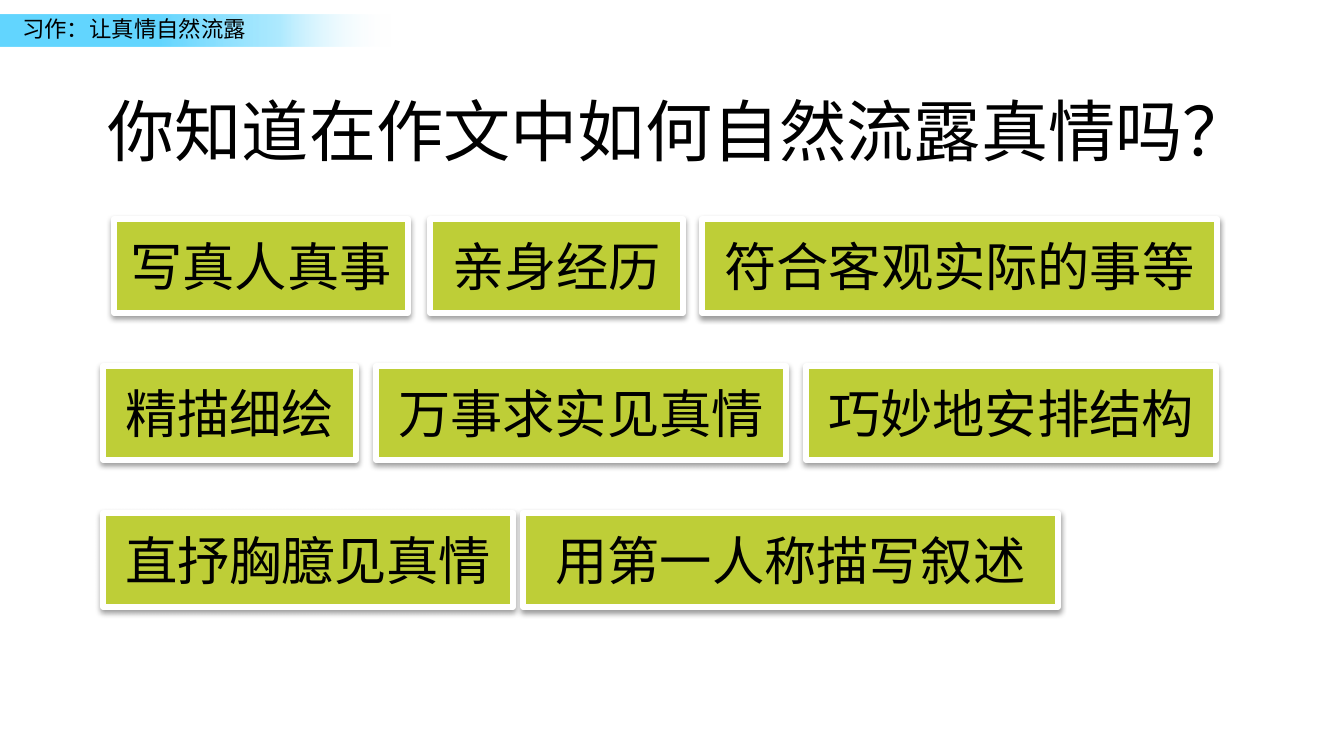
from dataclasses import dataclass

from lxml.etree import SubElement
from pptx import Presentation
from pptx.dml.color import RGBColor
from pptx.enum.shapes import MSO_SHAPE
from pptx.enum.text import MSO_ANCHOR, MSO_AUTO_SIZE, PP_ALIGN
from pptx.oxml import parse_xml
from pptx.oxml.ns import nsdecls, qn
from pptx.shapes.autoshape import Shape
from pptx.slide import Slide
from pptx.text.text import TextFrame
from pptx.util import Emu, Inches, Pt

SLIDE_WIDTH, SLIDE_HEIGHT = 1344, 756
SCALE = Inches(10) / SLIDE_WIDTH


@dataclass(frozen=True)
class Theme:
    ink: str = "000000"
    white: str = "FFFFFF"
    card: str = "BECE37"
    band: tuple = ((40, "63D6FF", 100), (70, "97E4FF", 76), (97, "FFFFFF", 0))
    font: str = "Noto Sans CJK SC"
    serif: str = "Times New Roman"
    header_size: int = 12
    title_size: int = 36
    card_size: int = 28


@dataclass(frozen=True)
class Card:
    left: int
    width: int
    text: str
    font: str


THEME = Theme()
CARD_TOP, ROW_STEP, CARD_HEIGHT = 219, 147, 94
CARD_ROWS = (
    (
        Card(114, 294, "写真人真事", THEME.serif),
        Card(430, 253, "亲身经历", THEME.font),
        Card(702, 515, "符合客观实际的事等", THEME.font),
    ),
    (
        Card(103, 253, "精描细绘", THEME.font),
        Card(376, 410, "万事求实见真情", THEME.font),
        Card(806, 410, "巧妙地安排结构", THEME.font),
    ),
    (
        Card(103, 410, "直抒胸臆见真情", THEME.font),
        Card(523, 535, "用第一人称描写叙述", THEME.font),
    ),
)


def px(length: int) -> Emu:
    return Emu(round(length * SCALE))


def box(left: int, top: int, width: int, height: int) -> tuple:
    return px(left), px(top), px(width), px(height)


def write(frame: TextFrame, text: str, *, size: int, font: str = THEME.font,
          align: PP_ALIGN = PP_ALIGN.LEFT, anchor: MSO_ANCHOR = MSO_ANCHOR.TOP,
          wrap: bool = False, grow: bool = True) -> None:
    frame.word_wrap = wrap
    frame.auto_size = MSO_AUTO_SIZE.SHAPE_TO_FIT_TEXT if grow else MSO_AUTO_SIZE.NONE
    frame.vertical_anchor = anchor
    paragraph = frame.paragraphs[0]
    paragraph.alignment = align
    run = paragraph.add_run()
    run.text = text
    run.font.size = Pt(size)
    run.font.name = font
    run.font.color.rgb = RGBColor.from_string(THEME.ink)
    SubElement(run.font._element, qn("a:ea"), typeface=THEME.font)


def add_rectangle(slide: Slide, bounds: tuple) -> Shape:
    rectangle = slide.shapes.add_shape(MSO_SHAPE.RECTANGLE, *bounds)
    rectangle.shadow.inherit = False
    return rectangle


def add_header(slide: Slide) -> None:
    band = add_rectangle(slide, box(-4, 15, 407, 32))
    band.line.fill.background()
    stops = "".join(
        f'<a:gs pos="{position * 1000}"><a:srgbClr val="{color}">'
        f'<a:alpha val="{opacity * 1000}"/></a:srgbClr></a:gs>'
        for position, color, opacity in THEME.band
    )
    band._element.spPr.find(qn("a:prstGeom")).addnext(parse_xml(
        f'<a:gradFill {nsdecls("a")} rotWithShape="1"><a:gsLst>{stops}</a:gsLst>'
        '<a:lin ang="0" scaled="0"/></a:gradFill>'
    ))
    header = slide.shapes.add_textbox(*box(9, 9, 253, 40))
    write(header.text_frame, "习作：让真情自然流露", size=THEME.header_size)


def add_title(slide: Slide) -> None:
    title = slide.shapes.title
    title.left, title.top, title.width, title.height = box(94, 83, 1180, 95)
    write(title.text_frame, "你知道在作文中如何自然流露真情吗？", size=THEME.title_size)


def add_card(slide: Slide, card: Card, top: int) -> None:
    panel = add_rectangle(slide, box(card.left, top, card.width, CARD_HEIGHT))
    panel.fill.solid()
    panel.fill.fore_color.rgb = RGBColor.from_string(THEME.card)
    panel.line.color.rgb = RGBColor.from_string(THEME.white)
    panel.line.width = Pt(3)
    panel._element.spPr.find(qn("a:effectLst")).append(parse_xml(
        f'<a:outerShdw {nsdecls("a")} blurRad="{Pt(3.1)}" dist="{Pt(1.6)}" '
        f'dir="5400000" rotWithShape="0"><a:srgbClr val="{THEME.ink}">'
        '<a:alpha val="38000"/></a:srgbClr></a:outerShdw>'
    ))
    write(panel.text_frame, card.text, size=THEME.card_size, font=card.font,
          align=PP_ALIGN.CENTER, anchor=MSO_ANCHOR.MIDDLE, wrap=True, grow=False)


def main() -> None:
    presentation = Presentation()
    presentation.slide_width = px(SLIDE_WIDTH)
    presentation.slide_height = px(SLIDE_HEIGHT)
    slide = presentation.slides.add_slide(presentation.slide_layouts[5])
    add_header(slide)
    add_title(slide)
    for row, cards in enumerate(CARD_ROWS):
        for card in cards:
            add_card(slide, card, CARD_TOP + row * ROW_STEP)
    presentation.save("out.pptx")


if __name__ == "__main__":
    main()
